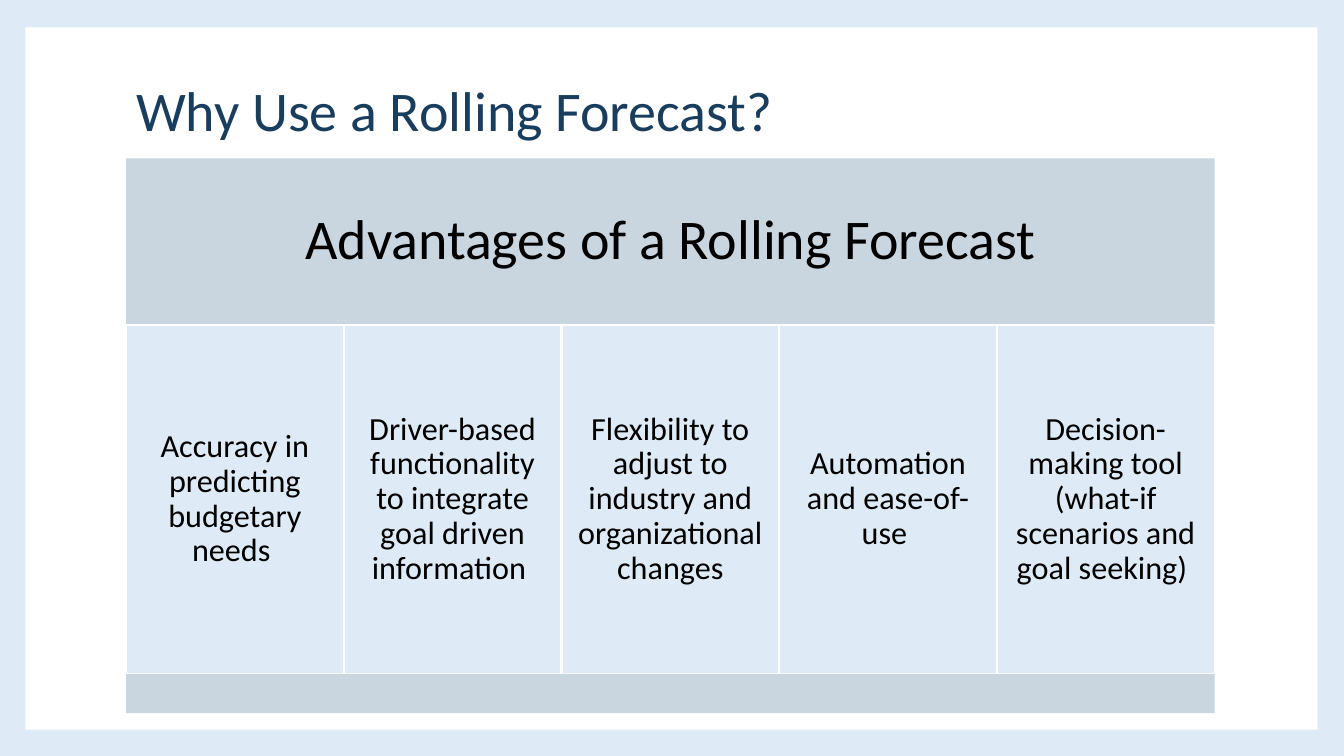
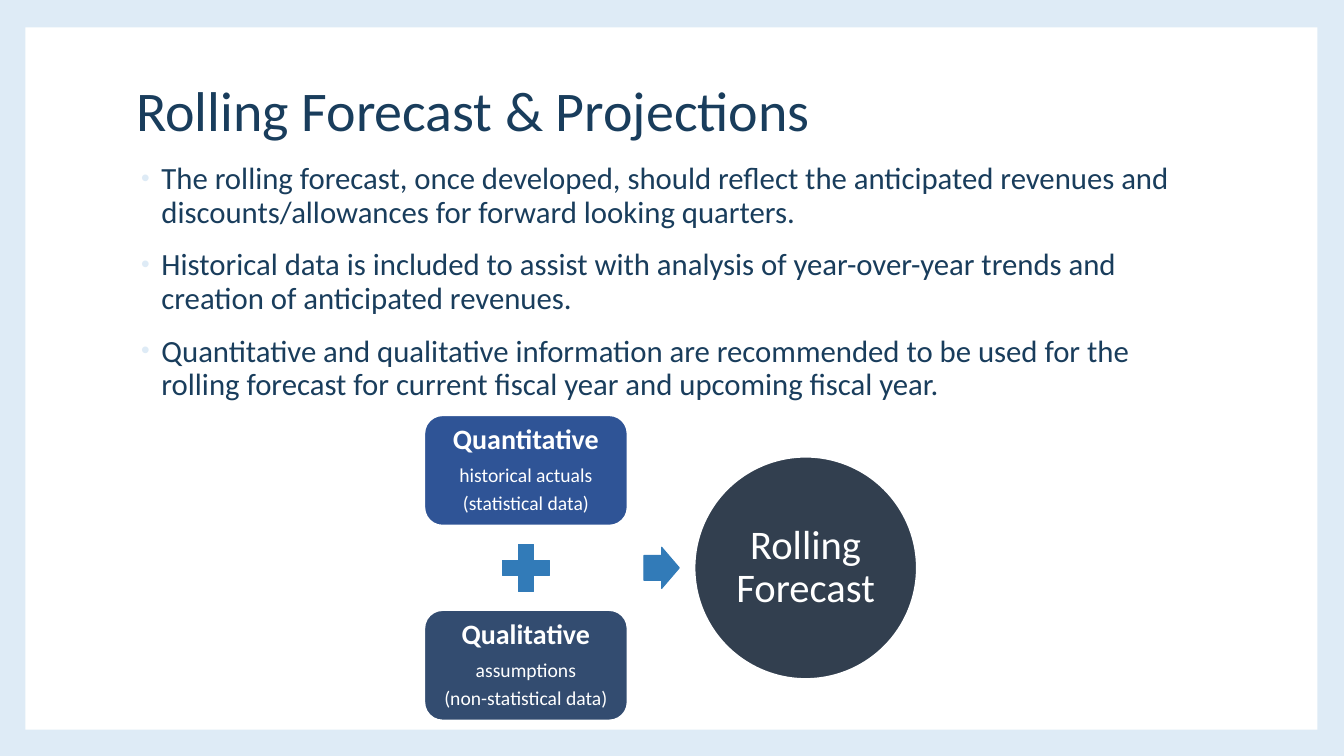
from dataclasses import dataclass

from lxml import etree
from pptx import Presentation
from pptx.dml.color import RGBColor
from pptx.enum import shapes, text
from pptx.oxml.ns import qn
from pptx.util import Cm, Pt

FONT = "Calibri"
PALE, WHITE, BLACK, NAVY = "DEEBF6", "FFFFFF", "000000", "193D5C"
BAND, ACCENT, CIRCLE = "C9D5DF", "327BB8", "323F4F"
LEFT, WIDTH = 3.18, 27.43
BODY_TOP = 3.99
Kind = shapes.MSO_SHAPE


@dataclass(frozen=True)
class Area:
    """A rectangle in centimetres."""
    left: float
    top: float
    width: float
    height: float

    def lengths(self) -> list:
        return [Cm(n) for n in (self.left, self.top, self.width, self.height)]


@dataclass(frozen=True)
class Card:
    heading: str
    details: tuple[str, ...]
    fill: str
    top: float


ADVANTAGES = (
    "Accuracy in predicting budgetary needs ",
    "Driver-based functionality to integrate goal driven information ",
    "Flexibility to adjust to industry and organizational changes",
    "Automation and ease-of-use ",
    "Decision-making tool (what-if scenarios and goal seeking) ",
)
POINTS = (
    "The rolling forecast, once developed, should reflect the anticipated "
    "revenues and discounts/allowances for forward looking quarters.",
    "Historical data is included to assist with analysis of year-over-year "
    "trends and creation of anticipated revenues.",
    "Quantitative and qualitative information are recommended to be used for "
    "the rolling forecast for current fiscal year and upcoming fiscal year.",
)
CARDS = (
    Card("Quantitative", ("historical actuals", "(statistical data)"), "2F5496", 10.46),
    Card("Qualitative", ("assumptions", "(non-statistical data)"), "334C70", 15.37),
)


def rgb(value: str) -> RGBColor:
    return RGBColor.from_string(value)


def add_shape(page, kind, area: Area, fill: str, line: str | None = None,
              line_width: float = 1.5):
    shape = page.shapes.add_shape(kind, *area.lengths())
    shape.shadow.inherit = False
    shape.fill.solid()
    shape.fill.fore_color.rgb = rgb(fill)
    if line:
        shape.line.color.rgb = rgb(line)
        shape.line.width = Pt(line_width)
    else:
        shape.line.fill.background()
    return shape


def set_frame(box, inset: float | None = None, middle: bool = True):
    """Wrap the text of a box, anchor it and set equal insets in centimetres."""
    frame = box.text_frame
    frame.word_wrap = True
    frame.vertical_anchor = text.MSO_ANCHOR.MIDDLE if middle else text.MSO_ANCHOR.TOP
    if inset is not None:
        frame.margin_left = frame.margin_right = Cm(inset)
        frame.margin_top = frame.margin_bottom = Cm(inset)
    return frame


def write(frame, words: str, *, size: float, color: str, bold: bool = False,
          centred: bool = False, before: float = 0, after: float = 0):
    """Fill the first empty paragraph of a frame, or append one."""
    first = frame.paragraphs[0]
    para = frame.add_paragraph() if first.runs else first
    para.alignment = text.PP_ALIGN.CENTER if centred else text.PP_ALIGN.LEFT
    para.line_spacing = 0.9
    para.space_before, para.space_after = Pt(before), Pt(after)
    span = para.add_run()
    span.text = words
    span.font.name, span.font.size, span.font.bold = FONT, Pt(size), bold
    span.font.color.rgb = rgb(color)
    return para


def add_bullet(para, color: str, percent: int) -> None:
    props = para._p.get_or_add_pPr()
    props.set("marL", str(Cm(0.64)))
    props.set("indent", str(-Cm(0.51)))
    tint = etree.SubElement(props, qn("a:buClr"))
    etree.SubElement(tint, qn("a:srgbClr"), val=color)
    etree.SubElement(props, qn("a:buSzPct"), val=str(percent * 1000))
    etree.SubElement(props, qn("a:buFont"), typeface="Arial")
    etree.SubElement(props, qn("a:buChar"), char="•")


def add_page(deck, title: str):
    """Add a slide with the pale border, white panel and title."""
    page = deck.slides.add_slide(deck.slide_layouts[6])
    page.background.fill.solid()
    page.background.fill.fore_color.rgb = rgb(PALE)
    add_shape(page, Kind.RECTANGLE, Area(0.64, 0.69, 32.56, 17.7), WHITE)
    box = page.shapes.add_textbox(*Area(LEFT, 1.7, WIDTH, 2.29).lengths())
    write(set_frame(box), title, size=40, color=NAVY)
    return page


def add_advantages(deck) -> None:
    page = add_page(deck, "Why Use a Rolling Forecast?")
    header_height, column_height, footer_height = 4.19, 8.8, 0.99
    column_top = BODY_TOP + header_height
    column_width = WIDTH / len(ADVANTAGES)

    header = add_shape(page, Kind.RECTANGLE,
                       Area(LEFT, BODY_TOP, WIDTH, header_height), BAND)
    write(set_frame(header, 0.43), "Advantages of a Rolling Forecast",
          size=40, color=BLACK, centred=True)
    for index, advantage in enumerate(ADVANTAGES):
        area = Area(LEFT + index * column_width, column_top, column_width, column_height)
        column = add_shape(page, Kind.RECTANGLE, area, PALE, WHITE)
        write(set_frame(column, 0.25), advantage, size=23, color=BLACK, centred=True)
    add_shape(page, Kind.RECTANGLE,
              Area(LEFT, column_top + column_height, WIDTH, footer_height), BAND)


def add_projections(deck) -> None:
    page = add_page(deck, "Rolling Forecast & Projections")
    body = page.shapes.add_textbox(*Area(LEFT, BODY_TOP, WIDTH, 12.95).lengths())
    frame = set_frame(body, middle=False)
    for point in POINTS:
        add_bullet(write(frame, point, size=22, color=NAVY, before=14), PALE, 80)

    card_left, card_width, card_height = 10.69, 5.13, 2.79
    for card in CARDS:
        area = Area(card_left, card.top, card_width, card_height)
        shape = add_shape(page, Kind.ROUNDED_RECTANGLE, area, card.fill, WHITE)
        frame = set_frame(shape, 0.08)
        write(frame, card.heading, size=20, color=WHITE, bold=True, centred=True, after=7)
        for detail in card.details:
            write(frame, detail, size=14, color=WHITE, centred=True, after=5)

    middle = (CARDS[0].top + CARDS[-1].top + card_height) / 2

    def add_centred(kind, left: float, width: float, height: float, fill: str,
                    line: str, line_width: float):
        """Add a shape centred vertically between the two cards."""
        area = Area(left, middle - height / 2, width, height)
        return add_shape(page, kind, area, fill, line, line_width)

    plus = 1.63
    add_centred(Kind.MATH_PLUS, card_left + (card_width - plus) / 2, plus, plus,
                ACCENT, ACCENT, 0.75)
    arrow = add_centred(Kind.RIGHT_ARROW, 16.23, 0.89, 1.04, ACCENT, ACCENT, 0.75)
    arrow.adjustments[0], arrow.adjustments[1] = 0.6, 0.5
    circle = add_centred(Kind.OVAL, 17.5, 5.61, 5.61, CIRCLE, WHITE, 1.5)
    write(set_frame(circle, 0.1), "Rolling Forecast", size=29, color=WHITE, centred=True)


def main() -> None:
    deck = Presentation()
    deck.slide_width, deck.slide_height = Cm(33.87), Cm(19.05)
    add_advantages(deck)
    add_projections(deck)
    deck.save("out.pptx")


if __name__ == "__main__":
    main()
